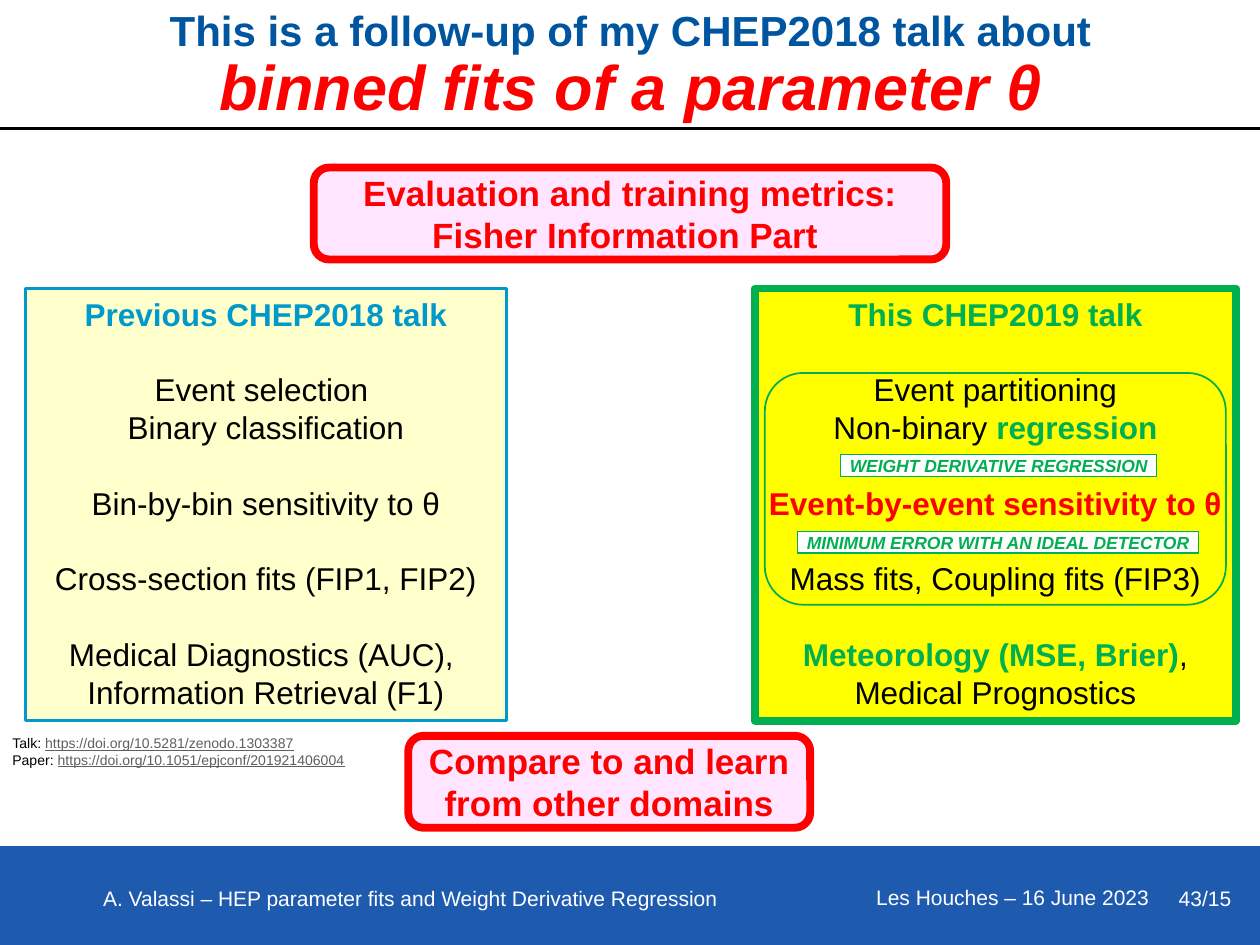
from dataclasses import dataclass

from lxml import etree
from pptx import Presentation
from pptx import util as u
from pptx.dml import color
from pptx.enum import shapes, text
from pptx.oxml import ns

BLACK, WHITE, RED, GREEN = "000000", "FFFFFF", "FF0000", "00B050"
GREY, CYAN, NAVY, FOOTER_BLUE = "5F5F5F", "0099CC", "0055A0", "1E5AAE"
CENTER, LEFT, RIGHT = text.PP_ALIGN.CENTER, text.PP_ALIGN.LEFT, text.PP_ALIGN.RIGHT
MIDDLE, TOP = text.MSO_ANCHOR.MIDDLE, text.MSO_ANCHOR.TOP
RECT, ROUNDED = shapes.MSO_SHAPE.RECTANGLE, shapes.MSO_SHAPE.ROUNDED_RECTANGLE


@dataclass
class Span:
    words: str
    size: float
    hue: str = BLACK
    bold: bool = False
    italic: bool = False
    underline: bool = False


@dataclass
class Line:
    spans: list[Span]
    align: text.PP_ALIGN = CENTER
    before: float = 0
    spacing: float | None = None


@dataclass
class Box:
    left: float
    top: float
    width: float
    height: float


@dataclass
class Look:
    fill: str | None
    outline: str
    weight: float
    alpha: int = 100
    form: shapes.MSO_SHAPE = RECT


def rgb(value: str) -> color.RGBColor:
    return color.RGBColor.from_string(value)


def lengths(box: Box) -> list[u.Length]:
    return [u.Inches(v) for v in (box.left, box.top, box.width, box.height)]


def write(frame, lines: list[Line], anchor=TOP, inset: tuple = (0.1, 0.05)) -> None:
    frame.word_wrap = True
    frame.vertical_anchor = anchor
    frame.margin_left = frame.margin_right = u.Inches(inset[0])
    frame.margin_top = frame.margin_bottom = u.Inches(inset[1])
    for number, line in enumerate(lines):
        paragraph = frame.add_paragraph() if number else frame.paragraphs[0]
        paragraph.alignment = line.align
        if line.before:
            paragraph.space_before = u.Pt(line.before)
        if line.spacing:
            paragraph.line_spacing = line.spacing
        for span in line.spans:
            run = paragraph.add_run()
            run.text = span.words
            font = run.font
            font.name, font.size = "Arial", u.Pt(span.size)
            font.bold, font.italic = span.bold, span.italic
            font.underline = span.underline
            font.color.rgb = rgb(span.hue)


def add_text(slide, box: Box, lines: list[Line], anchor=TOP, inset=(0.1, 0.05)) -> None:
    write(slide.shapes.add_textbox(*lengths(box)).text_frame, lines, anchor, inset)


def add_panel(slide, box: Box, look: Look, lines: list[Line] = (),
              anchor=TOP, inset=(0.1, 0.05)) -> None:
    panel = slide.shapes.add_shape(look.form, *lengths(box))
    panel.shadow.inherit = False
    if look.fill:
        panel.fill.solid()
        panel.fill.fore_color.rgb = rgb(look.fill)
    else:
        panel.fill.background()
    if look.alpha < 100:
        tint = panel.fill._xPr.find(".//" + ns.qn("a:srgbClr"))
        etree.SubElement(tint, ns.qn("a:alpha"), val=str(look.alpha * 1000))
    panel.line.color.rgb = rgb(look.outline)
    panel.line.width = u.Pt(look.weight)
    if lines:
        write(panel.text_frame, lines, anchor, inset)


def add_rule(slide, top: float) -> None:
    rule = slide.shapes.add_connector(
        shapes.MSO_CONNECTOR.STRAIGHT, 0, u.Inches(top), u.Inches(10), u.Inches(top))
    rule.line.color.rgb = rgb(BLACK)
    rule.line.width = u.Pt(1.5)
    etree.SubElement(rule._element.spPr, ns.qn("a:effectLst"))


def topic(*spans: tuple, gap: bool = False) -> Line:
    """One line of a talk panel; a gap leaves one line free above it."""
    return Line([Span(words, 18, *style) for words, *style in spans],
                before=21.6 if gap else 0)


def main() -> None:
    deck = Presentation()
    deck.slide_width, deck.slide_height = u.Inches(10), u.Inches(7.5)
    slide = deck.slides.add_slide(deck.slide_layouts[6])

    # Footer
    add_panel(slide, Box(0, 6.73, 10, 0.77), Look(FOOTER_BLUE, FOOTER_BLUE, 2))
    for box, words, align in (
        (Box(0.72, 6.92, 5.57, 0.42),
         "A. Valassi – HEP parameter fits and Weight Derivative Regression", LEFT),
        (Box(4.53, 6.91, 4.69, 0.42), "Les Houches – 16 June 2023", RIGHT),
        (Box(9.22, 6.92, 0.65, 0.42), "43/15", RIGHT),
    ):
        add_text(slide, box, [Line([Span(words, 12, WHITE)], align)], MIDDLE)

    # Title
    add_text(slide, Box(0.2, 0.4, 9.61, 0.27), [
        Line([Span("This is a follow-up of my CHEP2018 talk about", 24, NAVY, True)],
             spacing=0.9),
        Line([Span("binned fits of a parameter θ", 36, RED, True, True)], spacing=0.9),
    ], MIDDLE, (0.1, 0.1))
    add_rule(slide, 1.02)

    # Previous talk
    add_panel(slide, Box(0.2, 2.29, 3.82, 3.43), Look("FFFFCC", CYAN, 1.5), [
        topic(("Previous CHEP2018 talk", CYAN, True)),
        topic(("Event selection ",), gap=True),
        topic(("Binary classification",)),
        topic(("Bin-by-bin sensitivity to θ",), gap=True),
        topic(("Cross-section fits (FIP1, FIP2)",), gap=True),
        topic(("Medical Diagnostics (AUC), ",), gap=True),
        topic(("Information Retrieval (F1)",)),
    ])

    # Key messages
    message = Look("FFCCFF", RED, 4.5, 50, ROUNDED)
    for box, messages in (
        (Box(3.24, 5.84, 3.19, 0.73), ["Compare to and learn from other domains"]),
        (Box(2.49, 1.33, 5.02, 0.73),
         ["Evaluation and training metrics:", "Fisher Information Part "]),
    ):
        add_panel(slide, box, message,
                  [Line([Span(words, 20, RED, True)]) for words in messages], MIDDLE)

    # References
    references = (("Talk: ", "https://doi.org/10.5281/zenodo.1303387"),
                  ("Paper: ", "https://doi.org/10.1051/epjconf/201921406004"))
    add_text(slide, Box(0, 5.78, 2.97, 0.37), [
        Line([Span(label, 8), Span(address, 8, GREY, underline=True)], LEFT)
        for label, address in references])

    # This talk
    add_panel(slide, Box(5.99, 2.29, 3.82, 3.43), Look("FFFF00", GREEN, 4.5), [
        topic(("This CHEP2019 talk", GREEN, True)),
        topic(("Event partitioning",), gap=True),
        topic(("Non-binary ",), ("regression", GREEN, True)),
        topic(("Event-by-event sensitivity to θ", RED, True), gap=True),
        topic(("Mass fits, Coupling fits (FIP3)",), gap=True),
        topic(("Meteorology (MSE, Brier)", GREEN, True), (", Medical Prognostics",),
              gap=True),
    ])
    add_panel(slide, Box(6.07, 2.96, 3.66, 1.84), Look(None, GREEN, 1, form=ROUNDED))
    for box, words in (
        (Box(6.67, 3.61, 2.51, 0.17), "WEIGHT DERIVATIVE REGRESSION"),
        (Box(6.33, 4.22, 3.18, 0.17), "MINIMUM ERROR WITH AN IDEAL DETECTOR"),
    ):
        add_panel(slide, box, Look(WHITE, GREEN, 0.75),
                  [Line([Span(words, 10, GREEN, True, True)])], inset=(0, 0))

    deck.save("out.pptx")


if __name__ == "__main__":
    main()
